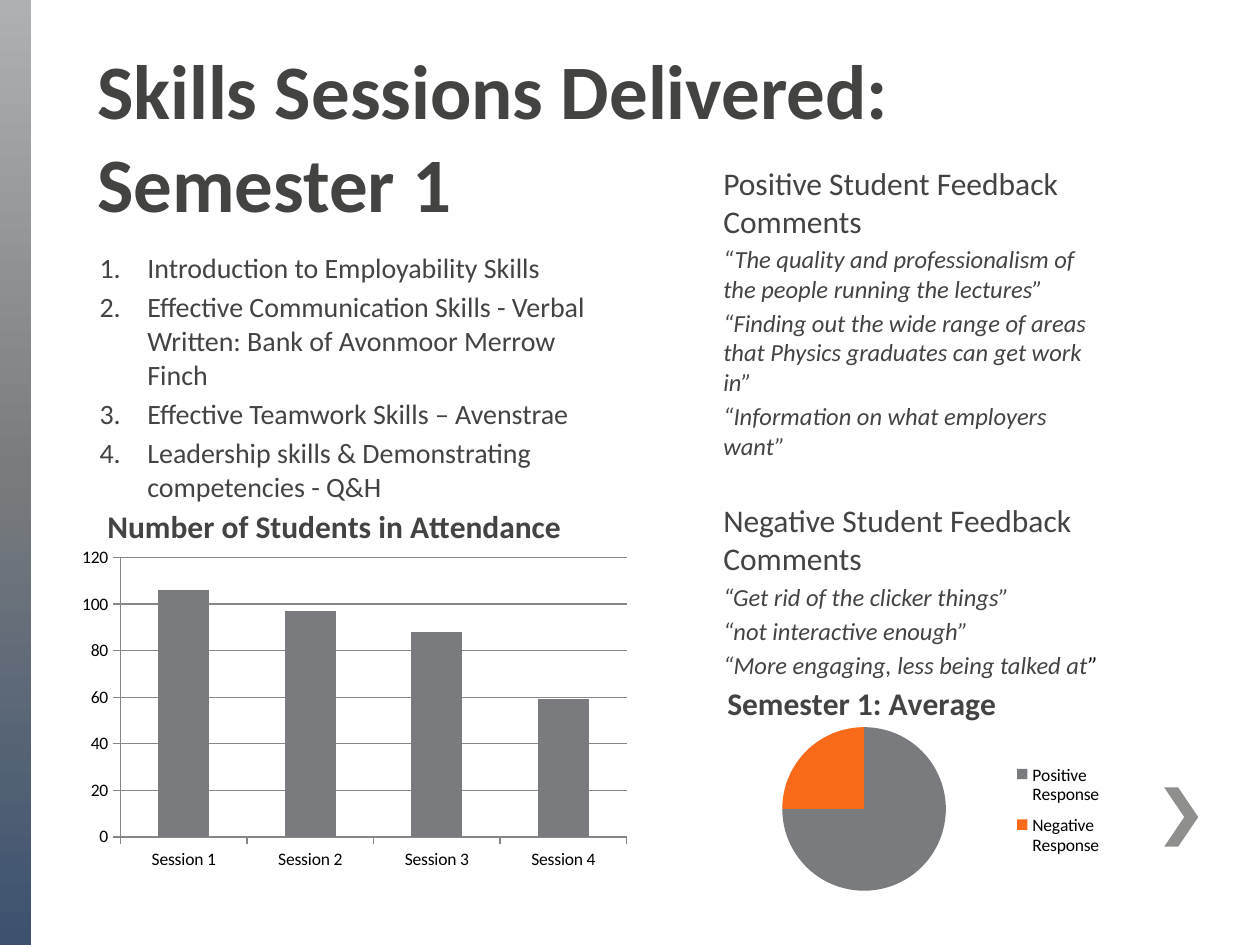
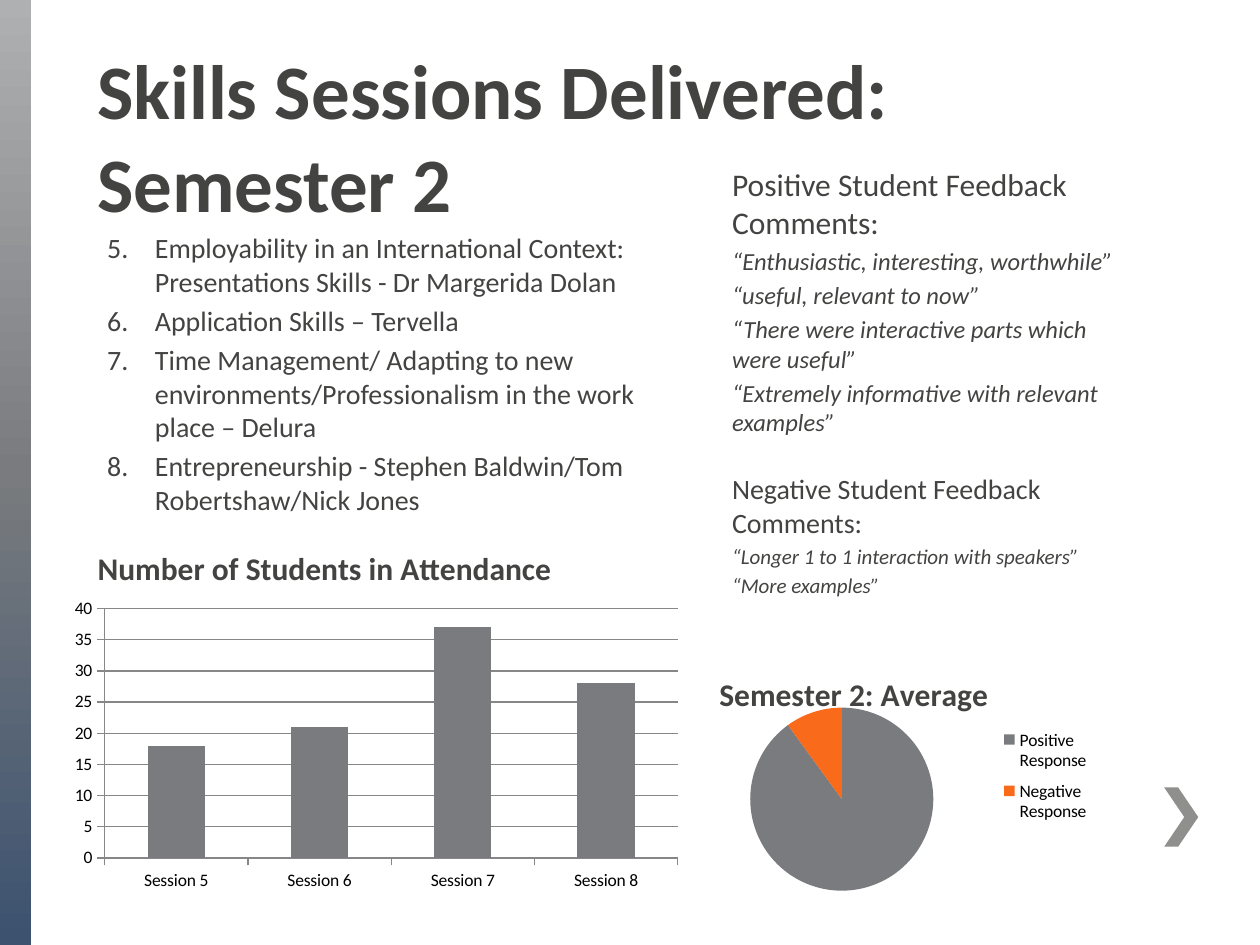
"""Build two slides on the skills sessions, with attendance and feedback."""
from copy import deepcopy

from lxml.etree import Element, SubElement
from pptx import Presentation
from pptx.chart.data import CategoryChartData as ChartData
from pptx.dml.color import RGBColor
from pptx.enum.chart import XL_CHART_TYPE as ChartType
from pptx.enum.chart import XL_LEGEND_POSITION as LegendPosition
from pptx.enum.chart import XL_TICK_MARK as TickMark
from pptx.enum.shapes import MSO_SHAPE as Shape
from pptx.enum.text import MSO_ANCHOR as Anchor
from pptx.enum.text import MSO_AUTO_SIZE as AutoSize
from pptx.enum.text import PP_ALIGN as Align
from pptx.oxml.ns import qn
from pptx.util import Inches, Pt

FONT = "Calibri"
INK, BLACK, GREY, ORANGE = "434342", "000000", "797B7E", "F96A1B"
AXIS, CHEVRON = "878787", "8F8F8D"
BAND = (("AFB0B2", 0), (GREY, 50), ("3C526F", 100))
COLUMNS, ROWS, CELL = 100, 75, Inches(0.1)
TWO_CONTENT = 3


def paint(target, color):
    target.rgb = RGBColor.from_string(color)


def style(font, size=16, color=INK, bold=False, italic=False):
    font.name, font.size, font.bold, font.italic = FONT, Pt(size), bold, italic
    paint(font.color, color)


def write(para, text, **form):
    span = para.add_run()
    span.text = text
    style(span.font, **form)


def arrange(element, index, target=None, **shares):
    for old in element.findall(qn("c:layout")):
        element.remove(old)
    layout = Element(qn("c:layout"))
    manual = SubElement(layout, qn("c:manualLayout"))
    settings = {"layoutTarget": target} if target else {}
    settings.update(xMode="edge", yMode="edge", **shares)
    for tag, value in settings.items():
        SubElement(manual, qn(f"c:{tag}")).set("val", str(value))
    element.insert(index, layout)


def box_shares(values):
    return dict(zip("xywh", values))


class SkillsDeck:
    def __init__(self):
        self.deck = Presentation()
        self.deck.slide_width = CELL * COLUMNS
        self.deck.slide_height = CELL * ROWS
        self.page = None

    def area(self, *cells):
        return [round(cell * CELL) for cell in cells]

    def start(self, title):
        self.page = self.deck.slides.add_slide(self.deck.slide_layouts[TWO_CONTENT])
        self.band()
        chevron = self.shape(Shape.CHEVRON, (92.4, 62.5, 2.7, 4.7))
        chevron.adjustments[0] = 0.59
        chevron.fill.solid()
        paint(chevron.fill.fore_color, CHEVRON)
        frame = self.place(self.page.shapes.title, (6.7, 2.9, 68.5, 18.8))
        para = frame.paragraphs[0]
        para.alignment = Align.LEFT
        write(para, title, size=44, bold=True)

    def shape(self, kind, cells):
        shape = self.page.shapes.add_shape(kind, *self.area(*cells))
        shape.shadow.inherit = False
        shape.line.fill.background()
        return shape

    def band(self):
        fill = self.shape(Shape.RECTANGLE, (0, 0, 2.5, ROWS)).fill
        fill.gradient()
        fill.gradient_angle = 270
        first = fill.gradient_stops[0]._gs
        first.addnext(deepcopy(first))
        for stop, (color, percent) in zip(fill.gradient_stops, BAND):
            paint(stop.color, color)
            stop.position = percent / 100

    def place(self, box, cells):
        box.left, box.top, box.width, box.height = self.area(*cells)
        frame = box.text_frame
        frame.word_wrap = True
        frame.auto_size = AutoSize.NONE
        frame.vertical_anchor = Anchor.TOP
        return frame

    def paragraph(self, frame, indent=0, number=None):
        used = frame.paragraphs[0].runs
        para = frame.add_paragraph() if used else frame.paragraphs[0]
        props = para._p.get_or_add_pPr()
        props.set("marL", str(Inches(indent)))
        props.set("indent", str(-Inches(indent)))
        if number:
            bullet = SubElement(props, qn("a:buAutoNum"))
            bullet.set("type", "arabicPeriod")
            bullet.set("startAt", str(number))
        else:
            SubElement(props, qn("a:buNone"))
        return para

    def sessions(self, cells, topics, first):
        frame = self.place(self.page.placeholders[1], cells)
        for topic in topics:
            write(self.paragraph(frame, 0.38, first), topic)

    def feedback(self, cells, groups, tail=""):
        frame = self.place(self.page.placeholders[2], cells)
        for heading, size, gap, quotes in groups:
            para = self.paragraph(frame)
            if gap:
                para.space_before = Pt(gap)
            write(para, heading, size=size)
            for quote in quotes:
                para = self.paragraph(frame)
                write(para, quote, size=size - 4, italic=True)
        if tail:
            write(para, tail, size=size - 4, italic=True, color=BLACK)

    def chart(self, kind, cells, title, values, title_at, plot):
        data = ChartData()
        data.categories = list(values)
        data.add_series(title, list(values.values()))
        frame = self.page.shapes.add_chart(kind, *self.area(*cells), data)
        chart = frame.chart
        style(chart.font, size=10, color=BLACK)
        chart.has_legend = False
        chart.has_title = True
        write(chart.chart_title.text_frame.paragraphs[0], title, size=18, bold=True)
        arrange(chart.chart_title._element, 1, **box_shares(title_at))
        plot_area = chart._chartSpace.chart.plotArea
        arrange(plot_area, 0, "inner", **box_shares(plot))
        return chart

    def attendance(self, cells, values, top, step, title_at, plot):
        chart = self.chart(ChartType.COLUMN_CLUSTERED, cells,
                           "Number of Students in Attendance", values, title_at, plot)
        bars = chart.plots[0]
        bars.gap_width = 150
        bars.vary_by_categories = False
        fill = bars.series[0].format.fill
        fill.solid()
        paint(fill.fore_color, GREY)
        scale = chart.value_axis
        scale.minimum_scale, scale.maximum_scale, scale.major_unit = 0, top, step
        scale.has_major_gridlines = True
        for axis in (scale, chart.category_axis):
            axis.major_tick_mark = TickMark.OUTSIDE
        for part in (scale, scale.major_gridlines, chart.category_axis):
            paint(part.format.line.color, AXIS)
            part.format.line.width = Pt(0.75)

    def average(self, cells, semester, positive, title_at, plot, legend_at):
        values = {"Positive Response": positive, "Negative Response": 100 - positive}
        chart = self.chart(ChartType.PIE, cells, f"Semester {semester}: Average",
                           values, title_at, plot)
        for index, color in enumerate((GREY, ORANGE)):
            fill = chart.plots[0].series[0].points[index].format.fill
            fill.solid()
            paint(fill.fore_color, color)
        chart.has_legend = True
        chart.legend.position = LegendPosition.RIGHT
        chart.legend.include_in_layout = False
        arrange(chart.legend._element, 1, **box_shares(legend_at))


def first_semester(skills):
    skills.start("Skills Sessions Delivered: Semester 1")
    skills.sessions((6.9, 19.4, 42.5, 20.5), (
        "Introduction to Employability Skills",
        "Effective Communication Skills - Verbal Written: Bank of Avonmoor Merrow Finch",
        "Effective Teamwork Skills – Avenstrae",
        "Leadership skills & Demonstrating competencies - Q&H"), 1)
    skills.feedback((56.4, 12.5, 32.9, 40.2), (
        ("Positive Student Feedback Comments", 18, 0, (
            "“The quality and professionalism of the people running the lectures”",
            "“Finding out the wide range of areas that Physics graduates can get work in”",
            "“Information on what employers want”")),
        ("Negative Student Feedback Comments", 18, 23.4, (
            "“Get rid of the clicker things”",
            "“not interactive enough”",
            "“More engaging, less being talked at"))), tail="”")
    skills.attendance(
        (5.1, 38.3, 49.6, 33.1),
        {"Session 1": 106, "Session 2": 97, "Session 3": 88, "Session 4": 59},
        120, 20, (0.06, 0.04), (0.09, 0.18, 0.81, 0.67))
    skills.average((54.3, 50.9, 37.1, 21.3), 1, 75, (0.08, 0.13),
                   (0.21, 0.32, 0.35, 0.61), (0.68, 0.42, 0.24, 0.42))


def second_semester(skills):
    skills.start("Skills Sessions Delivered: Semester 2")
    skills.sessions((7.5, 17.8, 44.9, 25.2), (
        "Employability in an International Context: "
        "Presentations Skills - Dr Margerida Dolan",
        "Application Skills – Tervella",
        "Time Management/ Adapting to new environments/Professionalism "
        "in the work place – Delura",
        "Entrepreneurship - Stephen Baldwin/Tom Robertshaw/Nick Jones"), 5)
    skills.feedback((57.1, 12.6, 32.9, 37), (
        ("Positive Student Feedback Comments:", 18, 0, (
            "“Enthusiastic, interesting, worthwhile”",
            "“useful, relevant to now”",
            "“There were interactive parts which were useful”",
            "“Extremely informative with relevant examples”")),
        ("Negative Student Feedback Comments:", 16, 20, (
            "“Longer 1 to 1 interaction with speakers”",
            "“More examples”"))))
    skills.attendance(
        (4.8, 41.4, 50, 30),
        {"Session 5": 18, "Session 6": 21, "Session 7": 37, "Session 8": 28},
        40, 5, (0.05, 0.05), (0.07, 0.23, 0.91, 0.66))
    skills.average((54.7, 49.3, 32.3, 22.8), 2, 90, (0.06, 0.16),
                   (0.15, 0.3, 0.45, 0.64), (0.75, 0.34, 0.25, 0.4))


def main():
    skills = SkillsDeck()
    first_semester(skills)
    second_semester(skills)
    skills.deck.save("out.pptx")


if __name__ == "__main__":
    main()
